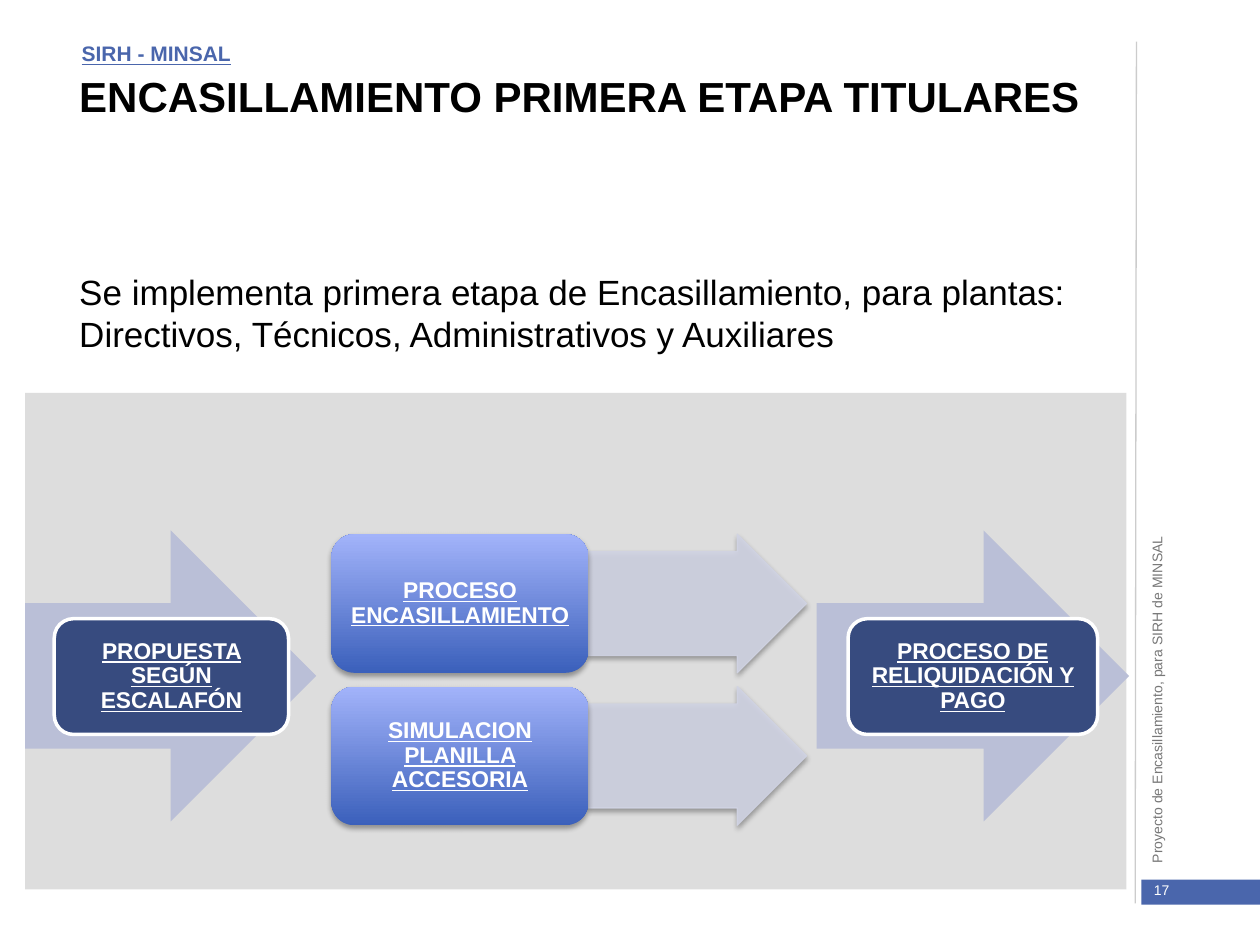
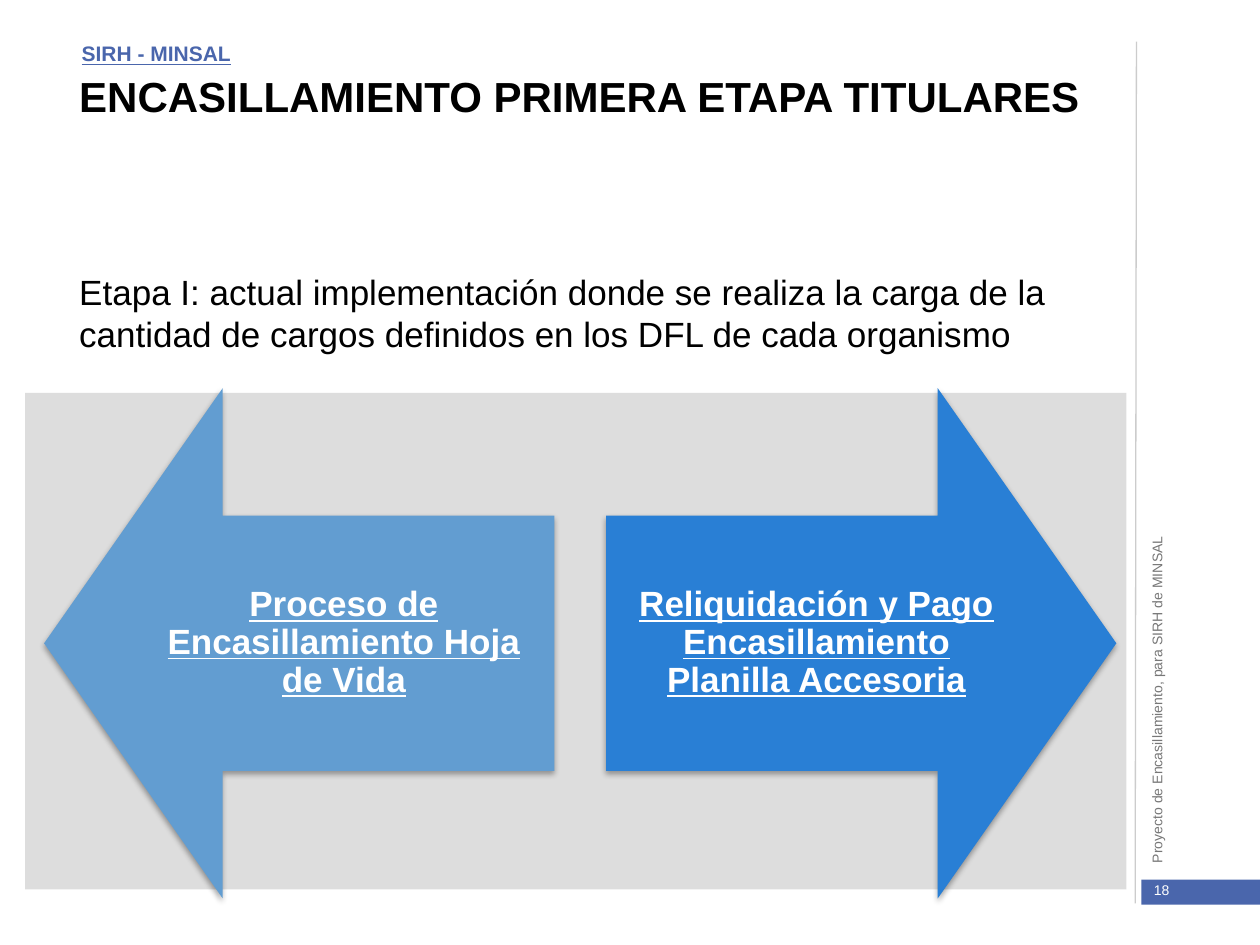
from dataclasses import dataclass
from typing import NamedTuple, Optional

import lxml.etree
import pptx
import pptx.dml.color
import pptx.enum.shapes
import pptx.enum.text
import pptx.oxml.ns
import pptx.util

Pt = pptx.util.Pt
MSO_SHAPE = pptx.enum.shapes.MSO_SHAPE
PP_ALIGN = pptx.enum.text.PP_ALIGN
MSO_ANCHOR = pptx.enum.text.MSO_ANCHOR
qn = pptx.oxml.ns.qn


@dataclass(frozen=True)
class Theme:
    font: str = "Arial"
    accent: str = "4A66AC"
    ink: str = "000000"
    white: str = "FFFFFF"
    footer: str = "777777"
    rule: str = "CCCCCC"
    panel: str = "DDDDDD"
    stage_arrow: str = "BABFD7"
    stage_card: str = "374B7F"
    process_arrow: str = "D0D3E3"
    process_bottom: str = "3B60BB"
    process_top: str = "A2B3FA"
    record_arrow: str = "629DD1"
    payment_arrow: str = "297FD5"
    title_size: float = 24
    body_size: float = 20
    card_size: float = 13
    kicker_size: float = 12
    small_size: float = 8


THEME = Theme()


class Box(NamedTuple):
    left: float
    top: float
    width: float
    height: float


class Insets(NamedTuple):
    horizontal: float
    vertical: float


class TextStyle(NamedTuple):
    size: float
    color: str
    bold: bool = False
    underline: bool = False
    spacing: Optional[float] = None
    exact: bool = False
    align: PP_ALIGN = PP_ALIGN.LEFT
    anchor: MSO_ANCHOR = MSO_ANCHOR.TOP
    insets: Insets = Insets(7.2, 3.6)


def label_style(size: float, insets: Insets) -> TextStyle:
    return TextStyle(size, THEME.white, True, True, 0.9, False,
                     PP_ALIGN.CENTER, MSO_ANCHOR.MIDDLE, insets)


TITLE = TextStyle(THEME.title_size, THEME.ink, True, spacing=23, exact=True)
BODY = TextStyle(THEME.body_size, THEME.ink, spacing=24, exact=True)
KICKER = TextStyle(THEME.kicker_size, THEME.accent, True, True, 14, True)
NUMBER = TextStyle(THEME.small_size, THEME.white)
FOOTER = TextStyle(THEME.small_size, THEME.footer,
                   anchor=MSO_ANCHOR.MIDDLE, insets=Insets(0, 0))
STAGE_LABEL = label_style(THEME.card_size, Insets(3.6, 3.6))
PROCESS_LABEL = label_style(THEME.card_size, Insets(3.6, 2.2))
ARROW_LABEL = label_style(THEME.body_size, Insets(11.5, 11.5))


class Stage(NamedTuple):
    label: str
    arrow_left: float
    arrow_width: float
    card_left: float
    card_width: float


class BigArrow(NamedTuple):
    label: str
    kind: MSO_SHAPE
    left: float
    color: str


STAGES = (
    Stage("PROCESO DE RELIQUIDACIÓN Y PAGO", 466.6, 178.6, 484.6, 142.6),
    Stage("PROPUESTA SEGÚN ESCALAFÓN", 14.4, 166.3, 31, 133.9),
)
PROCESSES = ("PROCESO ENCASILLAMIENTO", "SIMULACION PLANILLA ACCESORIA")
BIG_ARROWS = (
    BigArrow("Proceso de Encasillamiento Hoja de Vida",
             MSO_SHAPE.LEFT_ARROW, 25.2, THEME.record_arrow),
    BigArrow("Reliquidación y Pago Encasillamiento Planilla Accesoria",
             MSO_SHAPE.RIGHT_ARROW, 346.3, THEME.payment_arrow),
)


def rgb(color: str) -> pptx.dml.color.RGBColor:
    return pptx.dml.color.RGBColor.from_string(color)


def points(box: Box) -> list:
    return [Pt(length) for length in box]


def write(shape, text: str, style: TextStyle) -> None:
    frame = shape.text_frame
    frame.word_wrap = True
    frame.vertical_anchor = style.anchor
    frame.margin_left = frame.margin_right = Pt(style.insets.horizontal)
    frame.margin_top = frame.margin_bottom = Pt(style.insets.vertical)
    paragraph = frame.paragraphs[0]
    paragraph.alignment = style.align
    if style.spacing is not None:
        paragraph.line_spacing = Pt(style.spacing) if style.exact else style.spacing
    run = paragraph.add_run()
    run.text = text
    run.font.name = THEME.font
    run.font.size = Pt(style.size)
    run.font.bold = style.bold
    run.font.underline = style.underline
    run.font.color.rgb = rgb(style.color)


def add_text(slide, box: Box, text: str, style: TextStyle):
    shape = slide.shapes.add_textbox(*points(box))
    write(shape, text, style)
    return shape


def add_block(slide, kind: MSO_SHAPE, box: Box, color: Optional[str] = None):
    shape = slide.shapes.add_shape(kind, *points(box))
    shape.shadow.inherit = False
    shape.line.fill.background()
    if color is not None:
        shape.fill.solid()
        shape.fill.fore_color.rgb = rgb(color)
    return shape


def add_shadow(shape) -> None:
    effects = shape._element.spPr.find(qn("a:effectLst"))
    shadow = lxml.etree.SubElement(
        effects, qn("a:outerShdw"), blurRad=str(Pt(3.1)), dist=str(Pt(1.8)),
        dir="5400000", rotWithShape="0")
    color = lxml.etree.SubElement(shadow, qn("a:srgbClr"), val=THEME.ink)
    lxml.etree.SubElement(color, qn("a:alpha"), val="35000")


def set_opacity(shape, percent: int) -> None:
    for color in shape._element.spPr.findall(".//" + qn("a:solidFill") + "/" + qn("a:srgbClr")):
        lxml.etree.SubElement(color, qn("a:alpha"), val=str(percent * 1000))


def add_rule(slide) -> None:
    rule = slide.shapes.add_connector(
        pptx.enum.shapes.MSO_CONNECTOR.STRAIGHT,
        Pt(649.4), Pt(23.8), Pt(648.7), Pt(516.2))
    rule.line.color.rgb = rgb(THEME.rule)
    rule.line.width = Pt(0.75)
    lxml.etree.SubElement(rule._element.spPr, qn("a:effectLst"))


def add_base_slide(presentation, number: int, body: str):
    slide = presentation.slides.add_slide(presentation.slide_layouts[6])
    add_block(slide, MSO_SHAPE.RECTANGLE, Box(652.3, 502.6, 67.7, 14.4), THEME.accent)
    footer = add_text(slide, Box(445.7, 272.2, 430.6, 11.5),
                      "Proyecto de Encasillamiento, para SIRH de MINSAL", FOOTER)
    footer.rotation = 270
    add_rule(slide)
    add_text(slide, Box(652.3, 500.4, 67.7, 17.3), str(number), NUMBER)
    add_text(slide, Box(38.2, 42.5, 593.3, 106.6),
             "ENCASILLAMIENTO PRIMERA ETAPA TITULARES", TITLE)
    add_text(slide, Box(38.2, 151.2, 593.3, 102.2), body, BODY)
    add_block(slide, MSO_SHAPE.RECTANGLE, Box(14.4, 224.6, 629.3, 283.7), THEME.panel)
    add_text(slide, Box(39.6, 20.2, 598.3, 18.7), "SIRH - MINSAL", KICKER)
    return slide


def add_stage(slide, stage: Stage) -> None:
    add_block(slide, MSO_SHAPE.RIGHT_ARROW,
              Box(stage.arrow_left, 303.1, stage.arrow_width, 166.3), THEME.stage_arrow)
    card = add_block(slide, MSO_SHAPE.ROUNDED_RECTANGLE,
                     Box(stage.card_left, 353.5, stage.card_width, 66.2), THEME.stage_card)
    card.line.color.rgb = rgb(THEME.white)
    card.line.width = Pt(2)
    write(card, stage.label, STAGE_LABEL)


def add_process(slide, label: str, top: float) -> None:
    arrow = add_block(slide, MSO_SHAPE.RIGHT_ARROW,
                      Box(336.3, top, 124.6, 79.2), THEME.process_arrow)
    arrow.adjustments[0] = 0.75
    arrow.line.color.rgb = rgb(THEME.process_arrow)
    arrow.line.width = Pt(0.75)
    set_opacity(arrow, 90)
    add_shadow(arrow)
    card = add_block(slide, MSO_SHAPE.ROUNDED_RECTANGLE, Box(189.4, top, 146.9, 79.2))
    card.fill.gradient()
    card.fill.gradient_angle = 90
    for stop, color in zip(card.fill.gradient_stops,
                           (THEME.process_bottom, THEME.process_top)):
        stop.color.rgb = rgb(color)
    add_shadow(card)
    write(card, label, PROCESS_LABEL)


def add_big_arrow(slide, arrow: BigArrow) -> None:
    shape = add_block(slide, arrow.kind, Box(arrow.left, 221.8, 291.6, 291.6), arrow.color)
    shape.adjustments[0] = 0.5
    shape.adjustments[1] = 0.35
    add_shadow(shape)
    write(shape, arrow.label, ARROW_LABEL)


def main() -> None:
    presentation = pptx.Presentation()
    presentation.slide_width = Pt(720)
    presentation.slide_height = Pt(540)

    flow_slide = add_base_slide(
        presentation, 17,
        "Se implementa primera etapa de Encasillamiento, para plantas: "
        "Directivos, Técnicos, Administrativos y Auxiliares")
    for stage in STAGES:
        add_stage(flow_slide, stage)
    for row, label in enumerate(PROCESSES):
        add_process(flow_slide, label, 305.3 + row * 87.1)

    phase_slide = add_base_slide(
        presentation, 18,
        "Etapa I: actual implementación donde se realiza la carga de la "
        "cantidad de cargos definidos en los DFL de cada organismo")
    for arrow in BIG_ARROWS:
        add_big_arrow(phase_slide, arrow)

    presentation.save("out.pptx")


if __name__ == "__main__":
    main()
